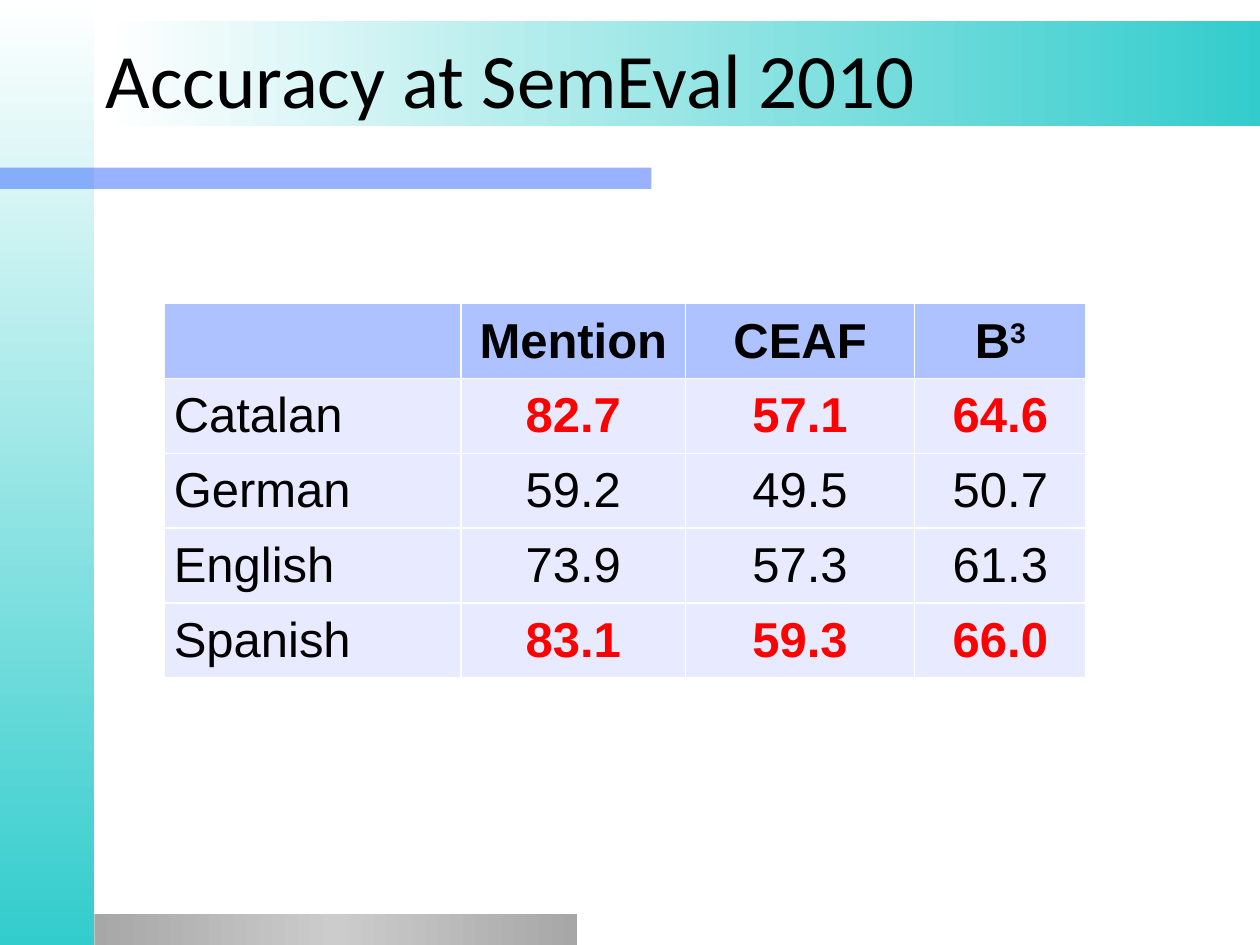
import pptx
import pptx.util
import pptx.dml.color
import pptx.enum.shapes
import pptx.enum.text
import pptx.oxml
import pptx.oxml.ns

Inches, Pt = pptx.util.Inches, pptx.util.Pt
ALIGN = pptx.enum.text.PP_ALIGN
MIDDLE = pptx.enum.text.MSO_ANCHOR.MIDDLE
qn = pptx.oxml.ns.qn
NS = pptx.oxml.ns.nsdecls("a")

COLORS = {
    "white": "FFFFFF", "teal": "33CCCC", "blue": "3366FF",
    "gray": "A7A7A7", "silver": "CCCCCC", "black": "000000",
    "red": "FF0000", "head": "ADC2FF", "body": "E8EAFF",
}
HEADS = ["", "Mention", "CEAF", "B^3"]  # ^ starts a superscript
SCORES = [
    ("Catalan", "82.7", "57.1", "64.6"),
    ("German", "59.2", "49.5", "50.7"),
    ("English", "73.9", "57.3", "61.3"),
    ("Spanish", "83.1", "59.3", "66.0"),
]
BEST = {"Catalan", "Spanish"}
WIDTHS = [2.36, 1.78, 1.82, 1.36]


def rgb(name):
    return pptx.dml.color.RGBColor.from_string(COLORS[name])


def add_run(para, text, font, size, color="black", bold=False):
    run = para.add_run()
    run.text = text
    run.font.name = font
    run.font.size = Pt(size)
    run.font.bold = bold
    run.font.color.rgb = rgb(color)
    return run


def add_bar(slide, box):
    bar = slide.shapes.add_shape(
        pptx.enum.shapes.MSO_SHAPE.RECTANGLE, *map(Inches, box))
    bar.shadow.inherit = False
    bar.line.fill.background()
    return bar


def add_fade(slide, box, names, angle=0):
    """Bar with evenly spaced gradient stops; angle turns clockwise."""
    bar = add_bar(slide, box)
    bar.fill.gradient()
    bar.fill.gradient_angle = (360 - angle) % 360
    stops = bar._element.spPr.find(qn("a:gradFill")).find(qn("a:gsLst"))
    for stop in list(stops):
        stops.remove(stop)
    for i, name in enumerate(names):
        pos = 100000 * i // (len(names) - 1)
        stops.append(pptx.oxml.parse_xml(
            f'<a:gs {NS} pos="{pos}"><a:srgbClr val="{COLORS[name]}"/></a:gs>'))


def add_frame(slide, width, height):
    """Side strip, rule, foot bar and title band."""
    side = 0.75
    add_fade(slide, (0, 0, side, height), ["white", "teal"], 90)
    rule = add_bar(slide, (0, 1.33, 5.17, 0.17))
    rule.fill.solid()
    rule.fill.fore_color.rgb = rgb("blue")
    tint = rule._element.spPr.find(qn("a:solidFill"))[0]
    tint.append(pptx.oxml.parse_xml(f'<a:alpha {NS} val="50000"/>'))
    add_fade(slide, (side, height - 0.25, 3.83, 0.25),
             ["gray", "silver", "gray"])
    add_fade(slide, (0.84, 0.17, width - 0.84, 0.83), ["white", "teal"])


def set_title(slide, box, text):
    title = slide.shapes.title
    title.left, title.top, title.width, title.height = map(Inches, box)
    frame = title.text_frame
    frame.auto_size = pptx.enum.text.MSO_AUTO_SIZE.NONE
    frame.vertical_anchor = MIDDLE
    para = frame.paragraphs[0]
    para.alignment = ALIGN.LEFT
    add_run(para, text, "Calibri", 44)
    slide.shapes._spTree.append(title._element)  # in front of the band


def add_edges(cell):
    """Thin white lines on all four sides, placed ahead of the fill."""
    props = cell._tc.get_or_add_tcPr()
    for i, side in enumerate(("lnL", "lnR", "lnT", "lnB")):
        props.insert(i, pptx.oxml.parse_xml(
            f'<a:{side} {NS} w="12700"><a:solidFill>'
            f'<a:srgbClr val="{COLORS["white"]}"/></a:solidFill></a:{side}>'))


def fill_cell(cell, text, fill, align, color, bold):
    cell.fill.solid()
    cell.fill.fore_color.rgb = rgb(fill)
    add_edges(cell)
    cell.vertical_anchor = MIDDLE
    cell.margin_left = cell.margin_right = Inches(0.08)
    cell.margin_top = cell.margin_bottom = 0
    para = cell.text_frame.paragraphs[0]
    para.alignment = align
    for i, part in enumerate(text.split("^") if text else []):
        run = add_run(para, part, "Arial", 28, color, bold)
        if i:
            run.font._element.set("baseline", "30000")


def add_scores(slide, box):
    rows = [HEADS, *SCORES]
    table = slide.shapes.add_table(
        len(rows), len(HEADS), *map(Inches, box)).table
    for col, width in zip(table.columns, WIDTHS):
        col.width = Inches(width)
    for r, row in enumerate(rows):
        for c, text in enumerate(row):
            best = c > 0 and row[0] in BEST
            fill_cell(table.cell(r, c), text,
                      "body" if r else "head",
                      ALIGN.CENTER if c else ALIGN.LEFT,
                      "red" if best else "black",
                      best or r == 0)


def main():
    deck = pptx.Presentation()
    width, height = 10, 7.5
    deck.slide_width, deck.slide_height = Inches(width), Inches(height)
    slide = deck.slides.add_slide(deck.slide_layouts[5])  # title only
    add_frame(slide, width, height)
    set_title(slide, (0.74, 0.17, 8.5, 0.89), "Accuracy at SemEval 2010")
    add_scores(slide, (1.3, 2.41, sum(WIDTHS), 2.97))
    deck.save("out.pptx")


if __name__ == "__main__":
    main()
